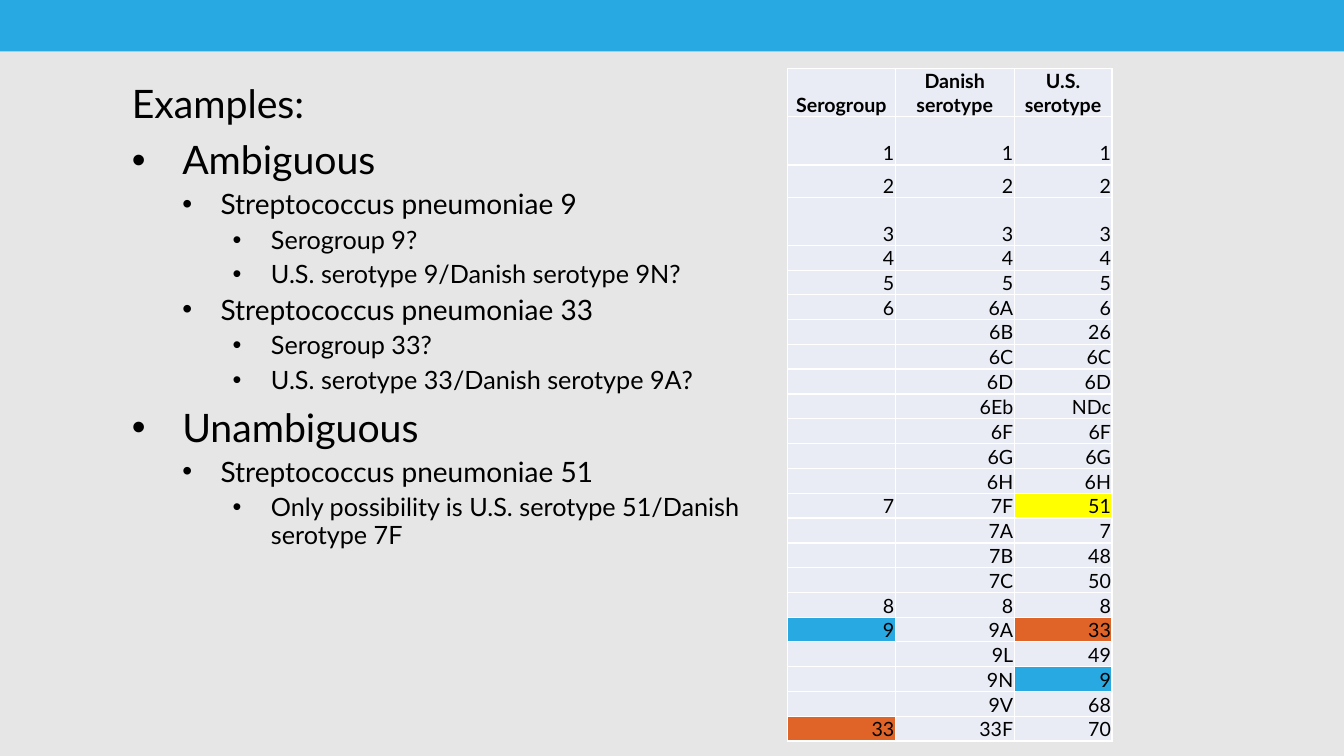
from dataclasses import dataclass

import lxml.etree
import pptx
import pptx.dml.color
import pptx.enum.shapes
import pptx.enum.text
import pptx.oxml.ns
import pptx.slide
import pptx.table
import pptx.util

Inches = pptx.util.Inches
Pt = pptx.util.Pt
RGBColor = pptx.dml.color.RGBColor
Align = pptx.enum.text.PP_ALIGN
qn = pptx.oxml.ns.qn

BLUE = RGBColor(0x29, 0xA9, 0xE1)
ORANGE = RGBColor(0xE0, 0x63, 0x28)
YELLOW = RGBColor(0xFF, 0xFF, 0x00)
PALE = RGBColor(0xE9, 0xEB, 0xF5)
GREY = RGBColor(0xE6, 0xE6, 0xE6)
WHITE = RGBColor(0xFF, 0xFF, 0xFF)
BLACK = RGBColor(0x00, 0x00, 0x00)
FONT = "Lato"
CELL_SIZE = 14


@dataclass(frozen=True)
class Level:
    size: int
    margin: float
    hanging: float
    space_before: int


@dataclass(frozen=True)
class Point:
    level: int
    text: str
    bullet: bool = True


LEVELS = [Level(28, 0.5, 0.5, 10), Level(20, 0.88, 0.38, 5), Level(18, 1.38, 0.38, 5)]

POINTS = [
    Point(0, "Examples:", bullet=False),
    Point(0, "Ambiguous"),
    Point(1, "Streptococcus pneumoniae 9"),
    Point(2, "Serogroup 9?"),
    Point(2, "U.S. serotype 9/Danish serotype 9N?"),
    Point(1, "Streptococcus pneumoniae 33"),
    Point(2, "Serogroup 33?"),
    Point(2, "U.S. serotype 33/Danish serotype 9A?"),
    Point(0, "Unambiguous"),
    Point(1, "Streptococcus pneumoniae 51"),
    Point(2, "Only possibility is U.S. serotype 51/Danish serotype 7F"),
]

SEROTYPES = [
    ("Serogroup", "Danish serotype", "U.S. serotype"),
    ("1", "1", "1"),
    ("2", "2", "2"),
    ("3", "3", "3"),
    ("4", "4", "4"),
    ("5", "5", "5"),
    ("6", "6A", "6"),
    ("", "6B", "26"),
    ("", "6C", "6C"),
    ("", "6D", "6D"),
    ("", "6Eb", "NDc"),
    ("", "6F", "6F"),
    ("", "6G", "6G"),
    ("", "6H", "6H"),
    ("7", "7F", "51"),
    ("", "7A", "7"),
    ("", "7B", "48"),
    ("", "7C", "50"),
    ("8", "8", "8"),
    ("9", "9A", "33"),
    ("", "9L", "49"),
    ("", "9N", "9"),
    ("", "9V", "68"),
    ("33", "33F", "70"),
]
HIGHLIGHTS = {
    (14, 2): YELLOW,
    (19, 0): BLUE,
    (21, 2): BLUE,
    (19, 2): ORANGE,
    (23, 0): ORANGE,
}
COLUMN_WIDTHS = [1.07, 1.18, 0.97]
ROW_HEIGHT = 0.24
TALL_ROWS = {0: 0.47, 1: 0.48, 2: 0.32, 3: 0.48}


def add_banner(page: pptx.slide.Slide) -> None:
    banner = page.shapes.add_shape(
        pptx.enum.shapes.MSO_SHAPE.RECTANGLE, 0, 0, Inches(13.33), Inches(0.51)
    )
    banner.shadow.inherit = False
    banner.fill.solid()
    banner.fill.fore_color.rgb = BLUE
    banner.line.fill.background()


def add_points(page: pptx.slide.Slide) -> None:
    box = page.shapes.add_textbox(Inches(1.21), Inches(0.79), Inches(6.36), Inches(5))
    frame = box.text_frame
    frame.word_wrap = True
    for index, point in enumerate(POINTS):
        para = frame.add_paragraph() if index else frame.paragraphs[0]
        level = LEVELS[point.level]
        para.text = point.text
        para.level = point.level
        para.line_spacing = 0.9
        if index:
            para.space_before = Pt(level.space_before)
        if point.bullet:
            properties = para._p.get_or_add_pPr()
            properties.set("marL", str(Inches(level.margin)))
            properties.set("indent", str(-Inches(level.hanging)))
            lxml.etree.SubElement(properties, qn("a:buFont"), typeface="Arial")
            lxml.etree.SubElement(properties, qn("a:buChar"), char="•")
        para.font.name = FONT
        para.font.size = Pt(level.size)
        para.font.color.rgb = BLACK


def add_borders(cell: pptx.table._Cell) -> None:
    properties = cell._tc.get_or_add_tcPr()
    for position, side in enumerate(("lnL", "lnR", "lnT", "lnB")):
        border = lxml.etree.Element(qn(f"a:{side}"), w=str(Pt(1)))
        fill = lxml.etree.SubElement(border, qn("a:solidFill"))
        lxml.etree.SubElement(fill, qn("a:srgbClr"), val=str(WHITE))
        properties.insert(position, border)


def fill_cell(cell: pptx.table._Cell, text: str, color: RGBColor, header: bool) -> None:
    cell.margin_left = cell.margin_right = cell.margin_top = Inches(0.01)
    cell.margin_bottom = 0
    cell.vertical_anchor = pptx.enum.text.MSO_ANCHOR.BOTTOM
    cell.fill.solid()
    cell.fill.fore_color.rgb = color
    add_borders(cell)
    para = cell.text_frame.paragraphs[0]
    if not text:
        lxml.etree.SubElement(para._p, qn("a:endParaRPr"), sz=str(CELL_SIZE * 100))
        return
    para.text = text
    para.alignment = Align.CENTER if header else Align.RIGHT
    para.font.name = FONT
    para.font.size = Pt(CELL_SIZE)
    para.font.bold = header
    para.font.color.rgb = BLACK


def add_serotypes(page: pptx.slide.Slide) -> None:
    table = page.shapes.add_table(
        len(SEROTYPES), len(COLUMN_WIDTHS),
        Inches(7.81), Inches(0.68), Inches(3.22), Inches(6.57),
    ).table
    table.first_row = False
    table.horz_banding = False
    for column, width in zip(table.columns, COLUMN_WIDTHS):
        column.width = Inches(width)
    for row, texts in enumerate(SEROTYPES):
        table.rows[row].height = Inches(TALL_ROWS.get(row, ROW_HEIGHT))
        for column, text in enumerate(texts):
            color = HIGHLIGHTS.get((row, column), PALE)
            fill_cell(table.cell(row, column), text, color, header=row == 0)


def main() -> None:
    deck = pptx.Presentation()
    deck.slide_width = Inches(13.33)
    deck.slide_height = Inches(7.5)
    page = deck.slides.add_slide(deck.slide_layouts[6])
    page.background.fill.solid()
    page.background.fill.fore_color.rgb = GREY
    add_banner(page)
    add_serotypes(page)
    add_points(page)
    deck.save("out.pptx")


if __name__ == "__main__":
    main()
